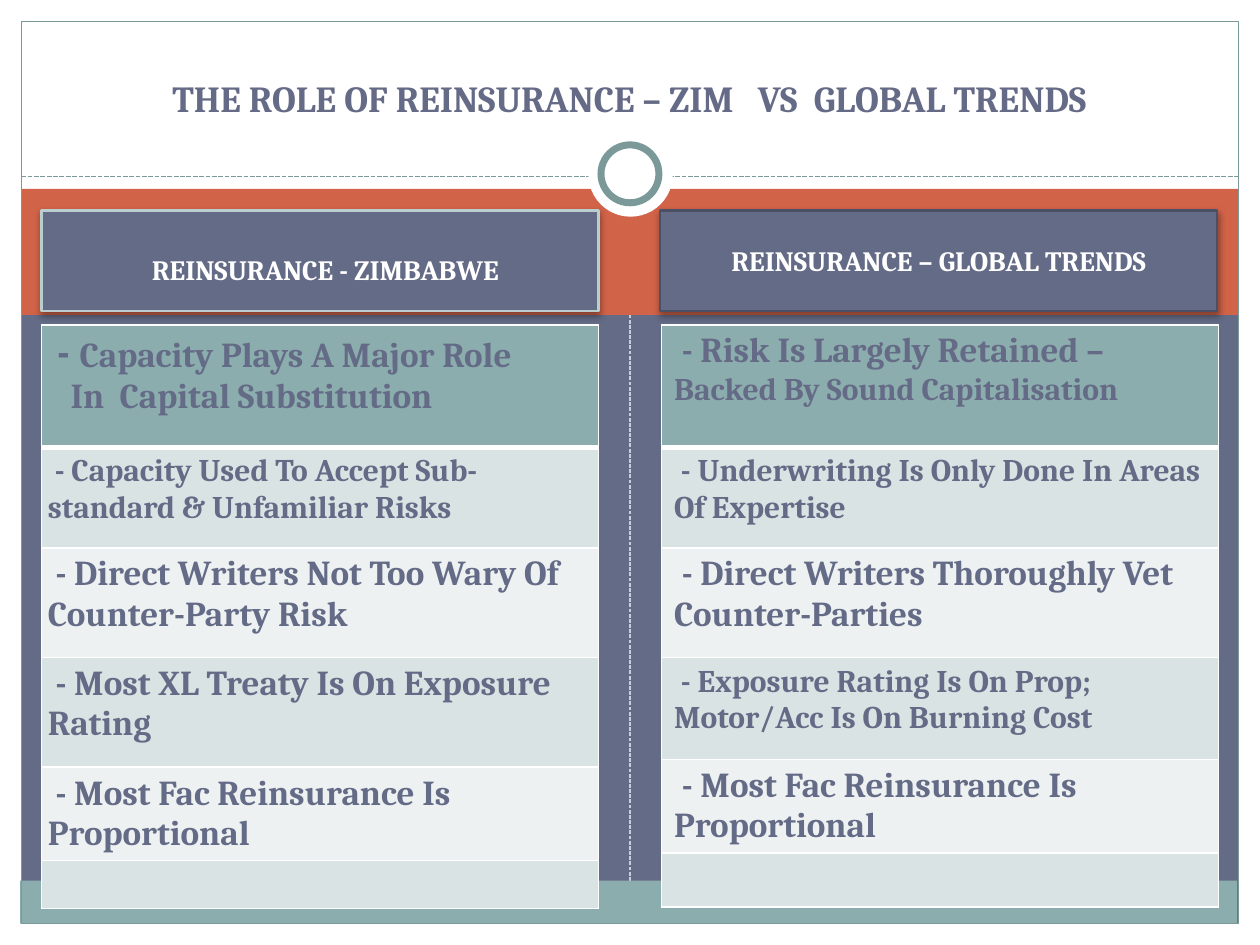
"""Build the slide comparing reinsurance in Zimbabwe with global trends."""
from dataclasses import dataclass
from typing import Optional

from lxml import etree
from pptx import Presentation
from pptx.dml.color import RGBColor
from pptx.enum.dml import MSO_LINE
from pptx.enum.shapes import MSO_CONNECTOR, MSO_SHAPE
from pptx.enum.text import MSO_ANCHOR, MSO_AUTO_SIZE, PP_ALIGN
from pptx.oxml import parse_xml
from pptx.oxml.ns import qn
from pptx.util import Inches, Pt

RECT, OVAL = MSO_SHAPE.RECTANGLE, MSO_SHAPE.OVAL
STRAIGHT, DASH = MSO_CONNECTOR.STRAIGHT, MSO_LINE.SQUARE_DOT
CENTER, NO_FIT = PP_ALIGN.CENTER, MSO_AUTO_SIZE.NONE
MIDDLE, BOTTOM = MSO_ANCHOR.MIDDLE, MSO_ANCHOR.BOTTOM
SERIF, CONDENSED = "Cambria", "Roboto Condensed"
A_NS = "http://schemas.openxmlformats.org/drawingml/2006/main"
COLORS = {
    "white": "FFFFFF", "slate": "646B86", "title": "656B86", "edge": "4B5064",
    "rust": "D16349", "sage": "8CADAE", "ring": "7C999A", "pale": "BACECE",
    "divider": "C5D1D7", "band": "DAE3E3", "light": "EEF1F2",
}
ROW_FILLS = ["sage", "band", "light", "band", "light", "band"]


@dataclass
class Run:
    text: str
    size: float
    color: str = "slate"
    font: str = SERIF


@dataclass
class Panel:
    box: tuple
    fill: Optional[str] = None
    line: Optional[str] = None
    width: float = 0.75
    kind: int = RECT


@dataclass
class Rule:
    start: tuple
    end: tuple
    color: str
    width: float


@dataclass
class Header:
    idx: int
    left: float
    line: str
    runs: list


@dataclass
class PointTable:
    left: float
    inset: float
    heights: list
    rows: list


PANELS_BACK = [
    Panel((0, 0, 10, 1.58), "white"),
    Panel((0, 7.33, 10, 0.17), "white"),
    Panel((0, 0, 0.17, 7.5), "white"),
    Panel((9.83, 0, 0.17, 7.5), "white"),
    Panel((0.17, 1.5, 9.66, 1), "rust"),
    Panel((0.16, 6.99, 9.66, 0.34), "sage"),
]
PANELS_FRONT = [
    Panel((0.17, 0.17, 9.66, 7.16), line="ring"),
    Panel((4.67, 1.05, 0.67, 0.67), "white", kind=OVAL),
    Panel((4.77, 1.15, 0.46, 0.46), "white", "ring", 4, OVAL),
]
DIVIDER = Rule((5, 6.99), (5, 2.41), "divider", 0.75)
TITLE_RULE = Rule((0.17, 1.4), (9.83, 1.4), "ring", 0.9)
TITLE = Run("THE ROLE OF REINSURANCE – ZIM   VS  GLOBAL TRENDS", 21, "title")
HEADERS = [
    Header(1, 0.33, "pale", [Run(" ", 28, "white"), Run("REINSURANCE - ZIMBABWE", 16, "white")]),
    Header(3, 5.24, "edge", [Run("REINSURANCE – GLOBAL TRENDS", 16, "white")]),
]
TABLES = [
    PointTable(0.33, 0.05, [0.97, 0.8, 0.87, 0.87, 0.74, 0.38], [
        [[Run(" - ", 22, font=CONDENSED), Run("Capacity Plays A Major Role", 20)],
         [Run("In  Capital Substitution", 20)]],
        [[Run(" - Capacity Used To Accept Sub-standard & Unfamiliar Risks", 18)]],
        [[Run(" - Direct Writers Not Too Wary Of Counter-Party Risk", 20)]],
        [[Run(" - Most XL Treaty Is On Exposure Rating", 20)]],
        [[Run(" - Most Fac Reinsurance Is Proportional", 20)]],
        [],
    ]),
    PointTable(5.25, 0.1, [0.97, 0.8, 0.87, 0.81, 0.74, 0.43], [
        [[Run(" - Risk Is Largely Retained – ", 20, "title"),
          Run("Backed By Sound Capitalisation", 18, "title")]],
        [[Run(" - Underwriting Is Only Done In Areas Of Expertise", 18, "title")]],
        [[Run(" - Direct Writers Thoroughly Vet Counter-Parties", 20)]],
        [[Run(" - Exposure Rating Is On Prop; Motor/Acc Is On Burning Cost", 18)]],
        [[Run(" - Most Fac Reinsurance Is Proportional", 20)]],
        [],
    ]),
]


def rgb(name: str) -> RGBColor:
    return RGBColor.from_string(COLORS[name])


def set_attrs(obj, values: dict) -> None:
    for name, value in values.items():
        setattr(obj, name, value)


def add_runs(p, runs: list) -> None:
    for run in runs:
        r = p.add_run()
        r.text = run.text
        set_attrs(r.font, {"name": run.font, "size": Pt(run.size), "bold": True})
        r.font.color.rgb = rgb(run.color)


def paint(sp, fill: Optional[str], line: Optional[str], width: float) -> None:
    if fill:
        sp.fill.solid()
        sp.fill.fore_color.rgb = rgb(fill)
    else:
        sp.fill.background()
    if line:
        sp.line.color.rgb = rgb(line)
        sp.line.width = Pt(width)
    else:
        sp.line.fill.background()


def add_panel(s, panel: Panel) -> None:
    sp = s.shapes.add_shape(panel.kind, *map(Inches, panel.box))
    sp.shadow.inherit = False
    paint(sp, panel.fill, panel.line, panel.width)


def add_rule(s, rule: Rule) -> None:
    cxn = s.shapes.add_connector(STRAIGHT, *map(Inches, rule.start + rule.end))
    cxn.line.color.rgb = rgb(rule.color)
    set_attrs(cxn.line, {"width": Pt(rule.width), "dash_style": DASH})
    etree.SubElement(cxn.element.spPr, qn("a:effectLst"))


def place_text(sp, box: tuple, anchor, runs: list) -> None:
    set_attrs(sp, dict(zip(("left", "top", "width", "height"), map(Inches, box))))
    tf = sp.text_frame
    set_attrs(tf, {"auto_size": NO_FIT, "word_wrap": True, "vertical_anchor": anchor})
    p = tf.paragraphs[0]
    p.alignment = CENTER
    add_runs(p, runs)
    sp.element.getparent().append(sp.element)


def add_header(s, header: Header) -> None:
    sp = next(ph for ph in s.placeholders if ph.placeholder_format.idx == header.idx)
    place_text(sp, (header.left, 1.67, 4.42, 0.8), MIDDLE, header.runs)
    paint(sp, "slate", header.line, 1.25)
    sp.element.spPr.append(parse_xml(
        f'<a:effectLst xmlns:a="{A_NS}"><a:outerShdw blurRad="50800" dist="25400" dir="5400000">'
        '<a:srgbClr val="000000"><a:alpha val="35000"/></a:srgbClr></a:outerShdw></a:effectLst>'))


def add_borders(cell, row: int) -> None:
    widths = {"L": 1, "R": 1, "T": 3 if row == 1 else 1, "B": 3 if row == 0 else 1}
    for side, width in widths.items():
        cell._tc.get_or_add_tcPr().append(parse_xml(
            f'<a:ln{side} xmlns:a="{A_NS}" w="{Pt(width)}"><a:solidFill>'
            f'<a:srgbClr val="{COLORS["white"]}"/></a:solidFill></a:ln{side}>'))


def add_points(s, points: PointTable) -> None:
    box = (points.left, 2.58, 4.42, sum(points.heights))
    table = s.shapes.add_table(len(points.rows), 1, *map(Inches, box)).table
    for i, (height, lines) in enumerate(zip(points.heights, points.rows)):
        table.rows[i].height = Inches(height)
        cell = table.cell(i, 0)
        side, edge = Inches(points.inset), Inches(0.05 if lines else 0.03)
        set_attrs(cell, {"margin_left": side, "margin_right": side,
                         "margin_top": edge, "margin_bottom": edge})
        add_borders(cell, i)
        cell.fill.solid()
        cell.fill.fore_color.rgb = rgb(ROW_FILLS[i])
        for j, runs in enumerate(lines):
            p = cell.text_frame.add_paragraph() if j else cell.text_frame.paragraphs[0]
            if j:
                p._p.get_or_add_pPr().set("marL", str(Inches(0.18)))
            add_runs(p, runs)


def main() -> None:
    prs = Presentation()
    prs.slide_width, prs.slide_height = Inches(10), Inches(7.5)
    s = prs.slides.add_slide(prs.slide_layouts[4])
    s.background.fill.solid()
    s.background.fill.fore_color.rgb = rgb("slate")
    add_rule(s, DIVIDER)
    for panel in PANELS_BACK:
        add_panel(s, panel)
    add_rule(s, TITLE_RULE)
    for panel in PANELS_FRONT:
        add_panel(s, panel)
    for header in HEADERS:
        add_header(s, header)
    place_text(s.shapes.title, (0.33, 0.17, 9.33, 0.83), BOTTOM, [TITLE])
    for points in TABLES:
        add_points(s, points)
    for ph in list(s.placeholders):
        if not ph.has_text_frame or not ph.text_frame.text:
            ph.element.getparent().remove(ph.element)
    prs.save("out.pptx")


if __name__ == "__main__":
    main()
